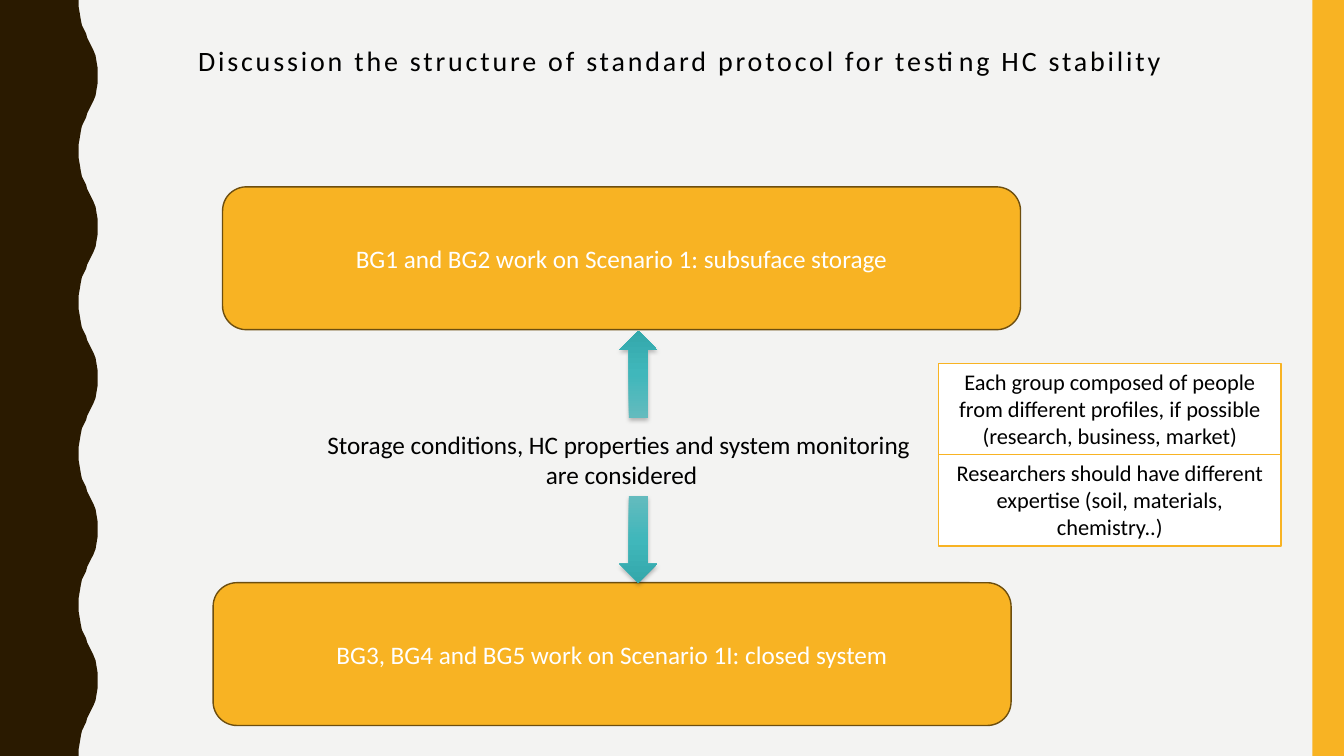
from pptx import Presentation
from pptx import util as u
from pptx.dml import color
from pptx.enum import shapes, text
from pptx.oxml import parse_xml

PX = 9525
WIDE, HIGH = 1280, 720
GOLD = "F8B323"
KIND = shapes.MSO_SHAPE
NS = 'xmlns:a="http://schemas.openxmlformats.org/drawingml/2006/main"'
WAVE = [(75, 0), (75, 7), (76, 13), (77, 19), (78, 24), (80, 28), (82, 32),
        (83, 36), (85, 40), (87, 44), (89, 48), (91, 53), (92, 59), (93, 65)]
STOPS = [(0, "64BBBE"), (50, "40B7BB"), (100, "34A8AB")]


def rgb(code):
    return color.RGBColor.from_string(code)


def px(*sizes):
    return [u.Emu(size * PX) for size in sizes]


def paint(shape, fill, line=None):
    shape.shadow.inherit = False
    shape.fill.solid()
    shape.fill.fore_color.rgb = rgb(fill)
    if line:
        shape.line.color.rgb = rgb(line)
        shape.line.width = u.Pt(1)
    else:
        shape.line.fill.background()


def write(shape, words, size, ink="000000", anchor=text.MSO_ANCHOR.TOP):
    frame = shape.text_frame
    frame.word_wrap = True
    frame.vertical_anchor = anchor
    frame.text = words
    for para in frame.paragraphs:
        para.alignment = text.PP_ALIGN.CENTER
        for run in para.runs:
            run.font.size = u.Pt(size)
            run.font.name = "Calibri"
            run.font.color.rgb = rgb(ink)
    return frame


def add_wave(slide, half=72):
    edge = []
    for top in range(0, HIGH, 2 * half):
        edge += [(x, top + y) for x, y in WAVE]
        edge.append((93, top + half))
        edge += [(x, top + 2 * half - y) for x, y in WAVE[:0:-1]]
    edge += [(75, HIGH), (0, HIGH)]
    form = slide.shapes.build_freeform(0, 0, scale=PX)
    form.add_line_segments(edge, close=True)
    paint(form.convert_to_shape(), "2A1A00")


def add_band(slide, *box):
    paint(slide.shapes.add_shape(KIND.RECTANGLE, *px(*box)), GOLD)


def add_title(slide, words, *box):
    frame = write(slide.shapes.add_textbox(*px(*box)), words, 20)
    para = frame.paragraphs[0]
    para.line_spacing = 0.9
    para.runs[0].font._element.set("spc", "200")


def add_group(slide, words, *box):
    shape = slide.shapes.add_shape(KIND.ROUNDED_RECTANGLE, *px(*box))
    paint(shape, GOLD, "6D4E0F")
    write(shape, words, 18, "FFFFFF", text.MSO_ANCHOR.MIDDLE)


def add_arrow(slide, turn, *box):
    arrow = slide.shapes.add_shape(KIND.DOWN_ARROW, *px(*box))
    arrow.rotation = turn
    arrow.line.fill.background()
    stops = "".join(f'<a:gs pos="{pos * 1000}"><a:srgbClr val="{code}"/></a:gs>'
                    for pos, code in STOPS)
    fill = parse_xml(f'<a:gradFill {NS} rotWithShape="1"><a:gsLst>{stops}</a:gsLst>'
                     '<a:lin ang="5400000" scaled="0"/></a:gradFill>')
    glow = parse_xml(f'<a:effectLst {NS}><a:outerShdw blurRad="38100" dist="25400" '
                     'dir="5400000" rotWithShape="0"><a:srgbClr val="000000">'
                     '<a:alpha val="25000"/></a:srgbClr></a:outerShdw></a:effectLst>')
    line = arrow.line._ln
    line.addprevious(fill)
    line.addnext(glow)


def add_center(slide, words, left, top, width, height):
    box = slide.shapes.add_textbox(*px(left, top, width, height))
    write(box, words, 18)
    wide, tall = 36, 83
    mid = left + (width - wide) // 2 + 16
    add_arrow(slide, 0, mid, top + height, wide, tall)
    add_arrow(slide, 180, mid, top - tall - 6, wide, tall)


def add_notes(slide, notes, left, top, width, height):
    step = height // len(notes)
    for row, words in enumerate(notes):
        box = px(left, top + row * step, width, step)
        card = slide.shapes.add_shape(KIND.RECTANGLE, *box)
        paint(card, "FFFFFF", GOLD)
        write(card, words, 16)


def main():
    deck = Presentation()
    deck.slide_width, deck.slide_height = px(WIDE, HIGH)
    slide = deck.slides.add_slide(deck.slide_layouts[6])
    slide.background.fill.solid()
    slide.background.fill.fore_color.rgb = rgb("F3F3F2")
    add_wave(slide)
    add_band(slide, 1250, 0, 30, HIGH)
    add_title(slide, "Discussion the structure of standard protocol for testing HC stability",
              132, 40, 1031, 52)
    add_group(slide, "BG1 and BG2 work on Scenario 1: subsuface storage", 212, 178, 760, 136)
    add_group(slide, "BG3, BG4 and BG5 work on Scenario 1I: closed system", 203, 555, 760, 136)
    add_center(slide, "Storage conditions, HC properties and system monitoring \nare considered",
               299, 404, 586, 68)
    add_notes(slide, [
        "Each group composed of people from different profiles, if possible "
        "(research, business, market)",
        "Researchers should have different expertise (soil, materials, chemistry..)",
    ], 894, 346, 326, 175)
    deck.save("out.pptx")


if __name__ == "__main__":
    main()
